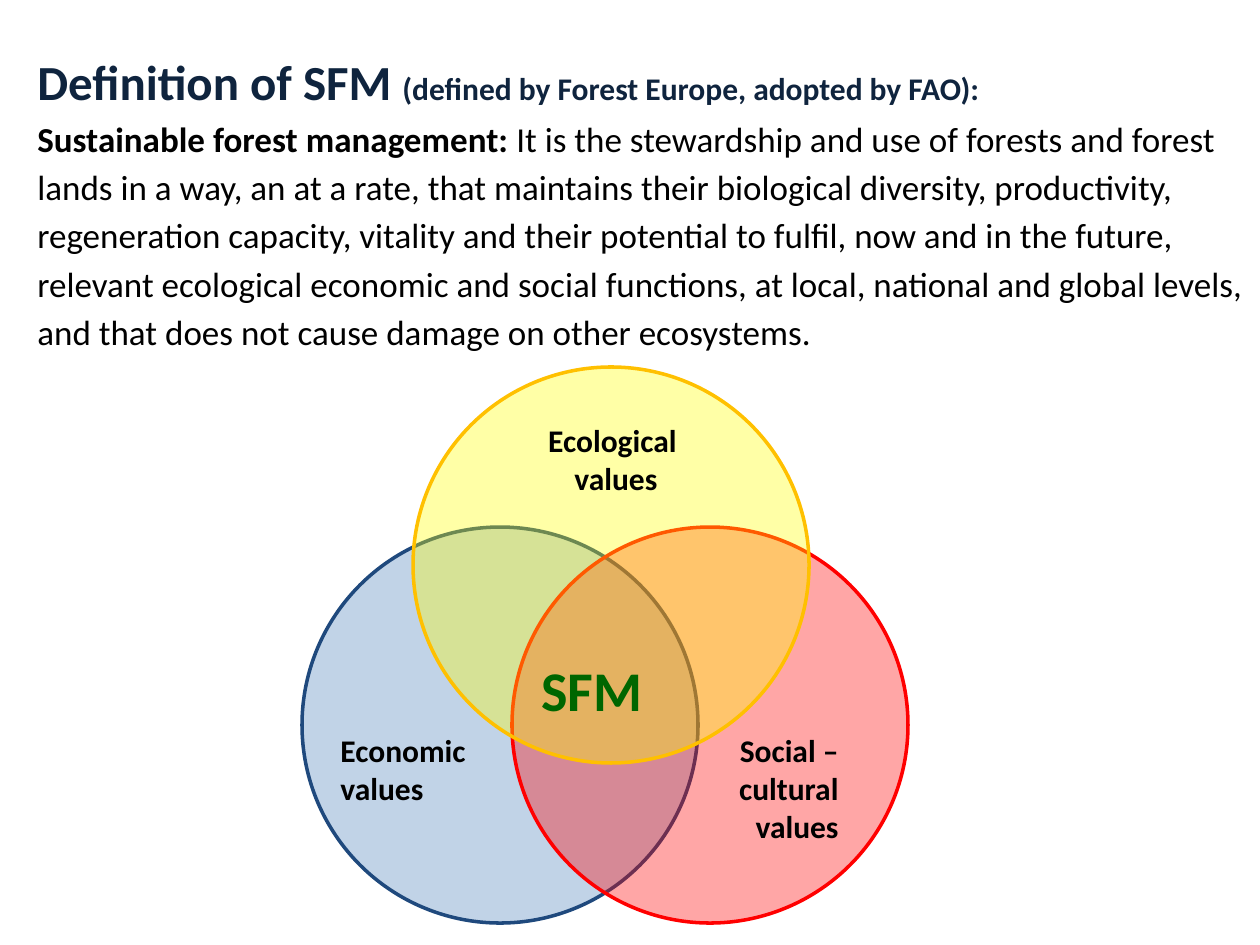
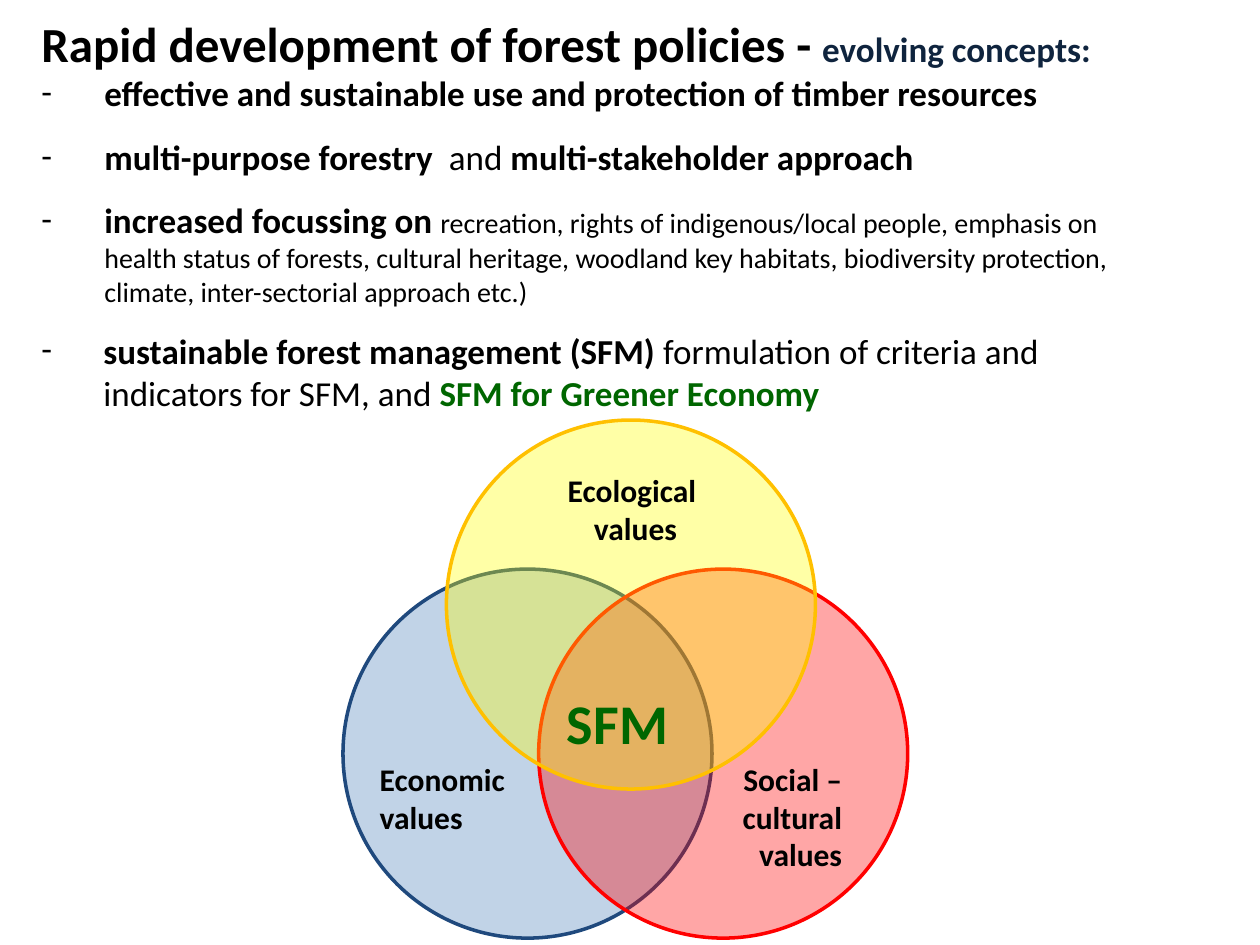
from lxml.etree import SubElement
from pptx import Presentation
from pptx.dml.color import RGBColor
from pptx.enum.shapes import MSO_SHAPE
from pptx.enum.text import PP_ALIGN
from pptx.oxml.ns import qn
from pptx.util import Pt

PX = 914400 / 126
FONT = "Calibri"
BLACK, NAVY, GREEN = "000000", "0F243E", "006600"

# Run styles: size, bold, colour
STYLES = {
    "title": (28, True, BLACK),
    "title_navy": (28, True, NAVY),
    "source": (18, True, NAVY),
    "subtitle": (20, True, NAVY),
    "strong": (20, True, BLACK),
    "body": (20, False, BLACK),
    "detail": (16, False, BLACK),
    "goal": (20, True, GREEN),
    "label": (18, True, BLACK),
    "core": (32, True, GREEN),
}

# Paragraph formats; the "hanging" entry is the dash indent in px
HEADING = {"line_spacing": 1.15}
FIRST_POINT = {"hanging": 63}
POINT = {"hanging": 63, "space_before": Pt(12.2)}
LAST_POINT = {"hanging": 62, "space_before": Pt(12.2)}

# Each slide: text box, paragraphs, diagram origin and circle diameter
SLIDES = [
    {
        "box": (25, 37, 1235, 422),
        "paragraphs": [
            (HEADING, [("title_navy", "Definition of SFM "),
                       ("source", "(defined by Forest Europe, adopted by FAO):")]),
            (HEADING, [("strong", "Sustainable forest management: "),
                       ("body", "It is the stewardship and use of forests and forest lands in a way, "
                                "an at a rate, that maintains their biological diversity, productivity, "
                                "regeneration capacity, vitality and their potential to fulfil, now and "
                                "in the future, relevant ecological economic and social functions, at "
                                "local, national and global levels, and that does not cause damage on "
                                "other ecosystems.")]),
        ],
        "origin": (302, 367),
        "diameter": 396,
    },
    {
        "box": (29, -2, 1160, 424),
        "paragraphs": [
            (HEADING, [("title", "Rapid development of forest policies - "),
                       ("subtitle", "evolving concepts:")]),
            (FIRST_POINT, [("strong", "effective and sustainable use and protection of timber resources")]),
            (POINT, [("strong", "multi-purpose forestry  "), ("body", "and "),
                     ("strong", "multi-stakeholder approach")]),
            (POINT, [("strong", "increased focussing on "),
                     ("detail", "recreation, rights of indigenous/local people, emphasis on health "
                                "status of forests, cultural heritage, woodland key habitats, "
                                "biodiversity protection, climate, inter-sectorial approach etc.)")]),
            (LAST_POINT, [("strong", "sustainable forest management (SFM) "),
                          ("body", "formulation of criteria and indicators for SFM, and "),
                          ("goal", "SFM for Greener Economy")]),
        ],
        "origin": (343, 420),
        "diameter": 369,
    },
]

# Diagram parts, measured from its origin at the base diameter
BASE_DIAMETER = 396
CIRCLES = [  # left, top, fill, line
    (0, 160, "4F81BD", "1F497D"),
    (210, 160, "FF0000", "FF0000"),
    (111, 0, "FFFF00", "FFC000"),
]
LABELS = [  # box, alignment, style, lines
    ((26, 358, 197, 111), PP_ALIGN.LEFT, "label", ["Economic", "values"]),
    ((213, 48, 202, 111), PP_ALIGN.CENTER, "label", ["Ecological ", "values"]),
    ((393, 358, 156, 159), PP_ALIGN.RIGHT, "label", ["Social –", "cultural", "values"]),
    ((227, 282, 159, 101), PP_ALIGN.LEFT, "core", ["SFM"]),
]


def emu(*lengths):
    return [round(length * PX) for length in lengths]


def color(hex_value):
    return RGBColor.from_string(hex_value)


def add_dash(paragraph, indent):
    properties = paragraph._p.get_or_add_pPr()
    properties.set("marL", str(indent))
    properties.set("indent", str(-indent))
    SubElement(properties, qn("a:buFont")).set("typeface", FONT)
    SubElement(properties, qn("a:buChar")).set("char", "-")


def add_text(shapes, box, paragraphs):
    frame = shapes.add_textbox(*emu(*box)).text_frame
    frame.word_wrap = True
    for index, (formats, runs) in enumerate(paragraphs):
        paragraph = frame.add_paragraph() if index else frame.paragraphs[0]
        for key, value in formats.items():
            if key != "hanging":
                setattr(paragraph, key, value)
        if "hanging" in formats:
            add_dash(paragraph, *emu(formats["hanging"]))
        for style, words in runs:
            run = paragraph.add_run()
            run.text = words
            size, bold, ink = STYLES[style]
            for key, value in {"name": FONT, "size": Pt(size), "bold": bold}.items():
                setattr(run.font, key, value)
            run.font.color.rgb = color(ink)


def add_circle(shapes, box, fill, line):
    circle = shapes.add_shape(MSO_SHAPE.OVAL, *emu(*box))
    circle.shadow.inherit = False
    circle.fill.solid()
    circle.fill.fore_color.rgb = color(fill)
    tint = circle.fill._xPr.find(qn("a:solidFill"))[0]
    SubElement(tint, qn("a:alpha")).set("val", "35000")
    circle.line.color.rgb = color(line)
    circle.line.width = Pt(2)


def add_values_diagram(slide, origin, diameter):
    scale = diameter / BASE_DIAMETER
    left, top = origin

    def place(x, y, width, height):
        return left + x * scale, top + y * scale, width * scale, height * scale

    diagram = slide.shapes.add_group_shape().shapes
    for x, y, fill, line in CIRCLES:
        add_circle(diagram, place(x, y, BASE_DIAMETER, BASE_DIAMETER), fill, line)
    for box, alignment, style, lines in LABELS:
        add_text(diagram, place(*box),
                 [({"alignment": alignment}, [(style, words)]) for words in lines])


def main():
    deck = Presentation()
    deck.slide_width, deck.slide_height = emu(1260, 945)
    for content in SLIDES:
        slide = deck.slides.add_slide(deck.slide_layouts[6])
        add_text(slide.shapes, content["box"], content["paragraphs"])
        add_values_diagram(slide, content["origin"], content["diameter"])
    deck.save("out.pptx")


if __name__ == "__main__":
    main()
